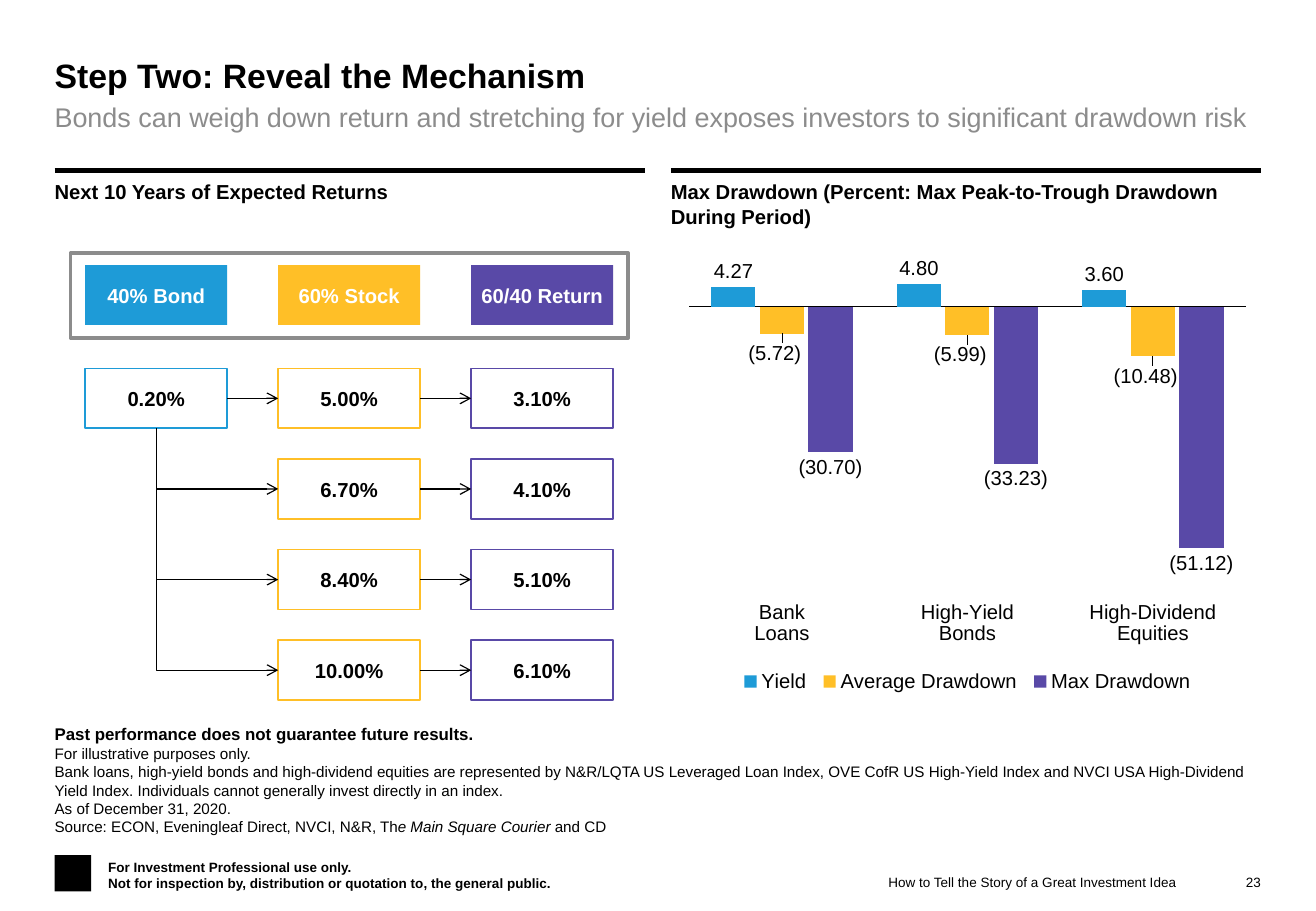
from lxml import etree
from pptx import Presentation
from pptx.chart import data as chart_data
from pptx.dml import color
from pptx.enum import chart as charts, shapes, text
from pptx.oxml import ns
from pptx.util import Pt

COLORS = {"black": "000000", "white": "FFFFFF", "gray": "8C8C8C",
          "bond": "1E9BD7", "stock": "FFBF27", "return": "5949A7"}
MARGIN, CONTENT_WIDTH, PANEL_WIDTH = 32.4, 715, 350
PANELS = ((32.4, "Next 10 Years of Expected Returns"),
          (397.6, "Max Drawdown (Percent: Max Peak-to-Trough Drawdown During Period)"))
BOX_LEFT, BOX_STEP, BOX_WIDTH, BOX_HEIGHT = 50.5, 114.4, 84.2, 35.5
HEADER_TOP, ROW_TOP, ROW_STEP = 157.2, 218.4, 53.7
RETURN_COLUMNS = (("40% Bond", "bond", ("0.20%",)),
                  ("60% Stock", "stock", ("5.00%", "6.70%", "8.40%", "10.00%")),
                  ("60/40 Return", "return", ("3.10%", "4.10%", "5.10%", "6.10%")))
CATEGORIES = ("Bank\nLoans", "High-Yield\nBonds", "High-Dividend\nEquities")
SERIES = (("Yield", "bond", (4.27, 4.80, 3.60)),
          ("Average Drawdown", "stock", (-5.72, -5.99, -10.48)),
          ("Max Drawdown", "return", (-30.70, -33.23, -51.12)))
LABEL_FORMAT = r"0.00;\(0.00\)"
# Each paragraph is a list of runs: (wording, size, bold, italic)
DISCLOSURES = (
    [("Past performance does not guarantee future results.", 10, True, False)],
    [("For illustrative purposes only.", 9, False, False)],
    [("Bank loans, high-yield bonds and high-dividend equities are represented by "
      "N&R/LQTA US Leveraged Loan Index, OVE CofR US High-Yield Index and NVCI USA "
      "High-Dividend Yield Index. Individuals cannot generally invest directly in "
      "an index.", 9, False, False)],
    [("As of December 31, 2020.", 9, False, False)],
    [("Source: ECON, Eveningleaf Direct, NVCI, N&R, Th", 9, False, False),
     ("e Main Square Courier ", 9, False, True), ("and CD", 9, False, False)])
AUDIENCE_NOTE = (
    [("For Investment Professional use only.", 8, True, False)],
    [("Not for inspection by, distribution or quotation to, the general public.",
      8, True, False)])


def rgb(name):
    return color.RGBColor.from_string(COLORS[name])


def style_font(font, size, color_name="black", bold=False, italic=False):
    font.name, font.size, font.bold, font.italic = "Arial", Pt(size), bold, italic
    font.color.rgb = rgb(color_name)


def write_text(frame, paragraphs, color_name="black", align=text.PP_ALIGN.LEFT,
               anchor=text.MSO_ANCHOR.TOP, insets=(0, 0, 0, 0)):
    frame.word_wrap, frame.vertical_anchor = True, anchor
    (frame.margin_left, frame.margin_top,
     frame.margin_right, frame.margin_bottom) = map(Pt, insets)
    for index, runs in enumerate(paragraphs):
        paragraph = frame.add_paragraph() if index else frame.paragraphs[0]
        paragraph.alignment = align
        for wording, size, bold, italic in runs:
            run = paragraph.add_run()
            run.text = wording
            style_font(run.font, size, color_name, bold, italic)


def add_text(slide, bounds, paragraphs, **options):
    box = slide.shapes.add_textbox(*map(Pt, bounds))
    write_text(box.text_frame, paragraphs, **options)


def add_box(slide, bounds, fill=None, line=None, line_width=1, label="", label_color="black"):
    shape = slide.shapes.add_shape(shapes.MSO_SHAPE.RECTANGLE, *map(Pt, bounds))
    shape.shadow.inherit = False
    for format_fill, color_name in ((shape.fill, fill), (shape.line.fill, line)):
        if color_name:
            format_fill.solid()
            format_fill.fore_color.rgb = rgb(color_name)
        else:
            format_fill.background()
    shape.line.width = Pt(line_width)
    if label:
        write_text(shape.text_frame, [[(label, 12, True, False)]], label_color,
                   text.PP_ALIGN.CENTER, text.MSO_ANCHOR.MIDDLE, (3.6,) * 4)


def add_line(slide, start, end, width=0.75, arrow=True, kind=shapes.MSO_CONNECTOR.STRAIGHT):
    connector = slide.shapes.add_connector(kind, *map(Pt, start + end))
    connector.line.color.rgb = rgb("black")
    connector.line.width = Pt(width)
    properties = connector.element.spPr
    if arrow:
        etree.SubElement(properties.find(ns.qn("a:ln")), ns.qn("a:tailEnd"), type="arrow")
    etree.SubElement(properties, ns.qn("a:effectLst"))
    return properties


def add_down_right_arrow(slide, start, end):
    """Draw a single-bend arrow: an elbow turned 270 degrees about its centre."""
    (x1, y1), (x2, y2) = start, end
    center_x, center_y = (x1 + x2) / 2, (y1 + y2) / 2
    half_width, half_height = (y2 - y1) / 2, (x2 - x1) / 2
    properties = add_line(slide, (center_x + half_width, center_y - half_height),
                          (center_x - half_width, center_y + half_height),
                          kind=shapes.MSO_CONNECTOR.ELBOW)
    properties.find(ns.qn("a:xfrm")).set("rot", str(270 * 60000))
    properties.find(ns.qn("a:prstGeom")).set("prst", "bentConnector2")


def add_returns_diagram(slide):
    add_box(slide, (41.8, 150, 330.5, 50.4), "white", "gray", 2.25)
    for column, (heading, color_name, values) in enumerate(RETURN_COLUMNS):
        left = BOX_LEFT + column * BOX_STEP
        add_box(slide, (left, HEADER_TOP, BOX_WIDTH, BOX_HEIGHT), color_name,
                label=heading, label_color="white")
        for row, value in enumerate(values):
            top = ROW_TOP + row * ROW_STEP
            add_box(slide, (left, top, BOX_WIDTH, BOX_HEIGHT), line=color_name, label=value)
    stock_left, return_left = BOX_LEFT + BOX_STEP, BOX_LEFT + 2 * BOX_STEP
    bond_bottom = (BOX_LEFT + BOX_WIDTH / 2, ROW_TOP + BOX_HEIGHT)
    for row in range(len(RETURN_COLUMNS[1][2])):
        middle = ROW_TOP + row * ROW_STEP + BOX_HEIGHT / 2
        add_line(slide, (stock_left + BOX_WIDTH, middle), (return_left, middle))
        if row == 0:
            add_line(slide, (BOX_LEFT + BOX_WIDTH, middle), (stock_left, middle))
        else:
            add_down_right_arrow(slide, bond_bottom, (stock_left, middle))


def set_layout(element, index, **settings):
    """Give a chart part a manual layout, in fractions of the chart."""
    for old_layout in element.findall(ns.qn("c:layout")):
        element.remove(old_layout)
    layout = etree.Element(ns.qn("c:layout"))
    manual = etree.SubElement(layout, ns.qn("c:manualLayout"))
    for tag, value in settings.items():
        etree.SubElement(manual, ns.qn("c:" + tag), val=str(value))
    element.insert(index, layout)


def shift_labels(series, x, y):
    """Move each value label of a series clear of the neighbouring bar."""
    for index in range(len(CATEGORIES)):
        label = series.points[index].data_label
        style_font(label.font, 12)
        label.position = charts.XL_LABEL_POSITION.OUTSIDE_END
    for element in series.data_labels._element.findall(ns.qn("c:dLbl")):
        set_layout(element, 1, x=x, y=y)
        element.insert(2, etree.Element(ns.qn("c:numFmt"), formatCode=LABEL_FORMAT,
                                        sourceLinked="0"))


def add_drawdown_chart(slide):
    data = chart_data.CategoryChartData()
    data.categories = CATEGORIES
    for name, _, values in SERIES:
        data.add_series(name, values)
    bounds = map(Pt, (408.2, 148.3, 330.5, 265))
    chart = slide.shapes.add_chart(charts.XL_CHART_TYPE.COLUMN_CLUSTERED, *bounds, data).chart
    chart.has_title, chart.has_legend = False, True
    chart.legend.position = charts.XL_LEGEND_POSITION.BOTTOM
    chart.legend.include_in_layout = False
    value_axis, category_axis = chart.value_axis, chart.category_axis
    value_axis.visible = value_axis.has_major_gridlines = False
    value_axis.minimum_scale, value_axis.maximum_scale = -60, 12
    category_axis.tick_label_position = charts.XL_TICK_LABEL_POSITION.LOW
    category_axis.major_tick_mark = charts.XL_TICK_MARK.NONE
    category_axis.format.line.color.rgb = rgb("black")
    category_axis.format.line.width = Pt(0.75)
    for part in (chart, chart.legend, category_axis.tick_labels):
        style_font(part.font, 12)
    plot = chart.plots[0]
    plot.gap_width, plot.overlap, plot.vary_by_categories = 100, -10, False
    for series, (_, color_name, _) in zip(plot.series, SERIES):
        series.invert_if_negative = False
        series.format.fill.solid()
        series.format.fill.fore_color.rgb = rgb(color_name)
        labels = series.data_labels
        labels.show_value = True
        labels.number_format, labels.number_format_is_linked = LABEL_FORMAT, False
        labels.position = charts.XL_LABEL_POSITION.OUTSIDE_END
        style_font(labels.font, 12)
    shift_labels(plot.series[1], x=-0.013, y=0.01)
    set_layout(chart.element.find(".//" + ns.qn("c:plotArea")), 0, layoutTarget="inner",
               xMode="edge", yMode="edge", x=0, y=0, w=1, h=0.76)
    set_layout(chart.element.find(".//" + ns.qn("c:legend")), 1,
               xMode="edge", yMode="edge", x=0.08, y=0.93, w=0.84, h=0.07)


def main():
    presentation = Presentation()
    presentation.slide_width, presentation.slide_height = Pt(780), Pt(540)
    slide = presentation.slides.add_slide(presentation.slide_layouts[6])
    add_text(slide, (MARGIN, 32.4, CONTENT_WIDTH, 24.5),
             [[("Step Two: Reveal the Mechanism", 20, True, False)]])
    add_text(slide, (MARGIN, 59.8, CONTENT_WIDTH, 24),
             [[("Bonds can weigh down return and stretching for yield exposes investors "
                "to significant drawdown risk", 16, False, False)]], color_name="gray")
    for left, heading in PANELS:
        add_line(slide, (left, 101.3), (left + PANEL_WIDTH, 101.3), width=3, arrow=False)
        add_text(slide, (left, 103, PANEL_WIDTH, 39), [[(heading, 12, True, False)]],
                 insets=(0, 3.6, 3.6, 3.6))
    add_returns_diagram(slide)
    add_drawdown_chart(slide)
    bottom = text.MSO_ANCHOR.BOTTOM
    add_text(slide, (MARGIN, 428.4, CONTENT_WIDTH, 67), DISCLOSURES, anchor=bottom)
    add_box(slide, (MARGIN, 506.9, 21.6, 21.6), "black")
    add_text(slide, (64.1, 509, 296, 19.4), AUDIENCE_NOTE, anchor=bottom)
    for left, width, wording in ((724.3, 23, "23"), (
            497.5, 200, "How to Tell the Story of a Great Investment Idea")):
        add_text(slide, (left, 517.7, width, 10.8), [[(wording, 8, False, False)]],
                 align=text.PP_ALIGN.RIGHT, anchor=text.MSO_ANCHOR.MIDDLE)
    presentation.save("out.pptx")


if __name__ == "__main__":
    main()
